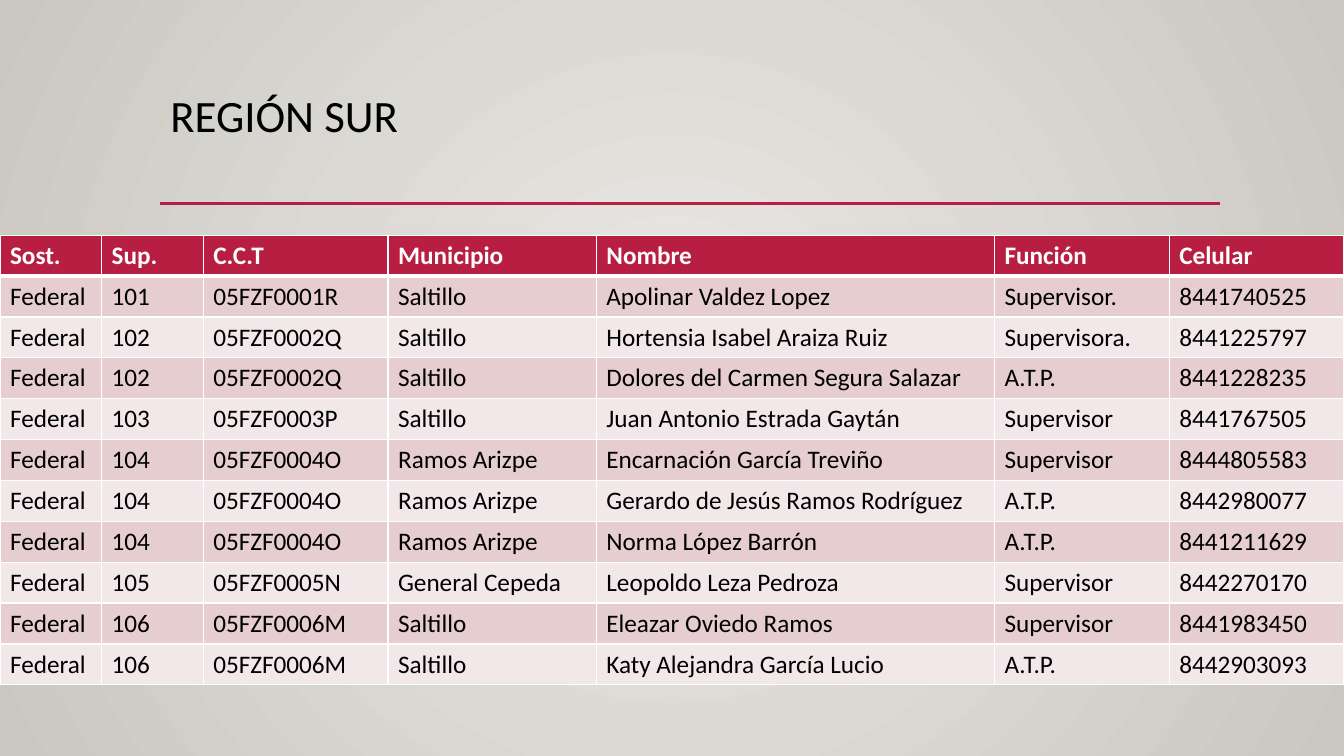
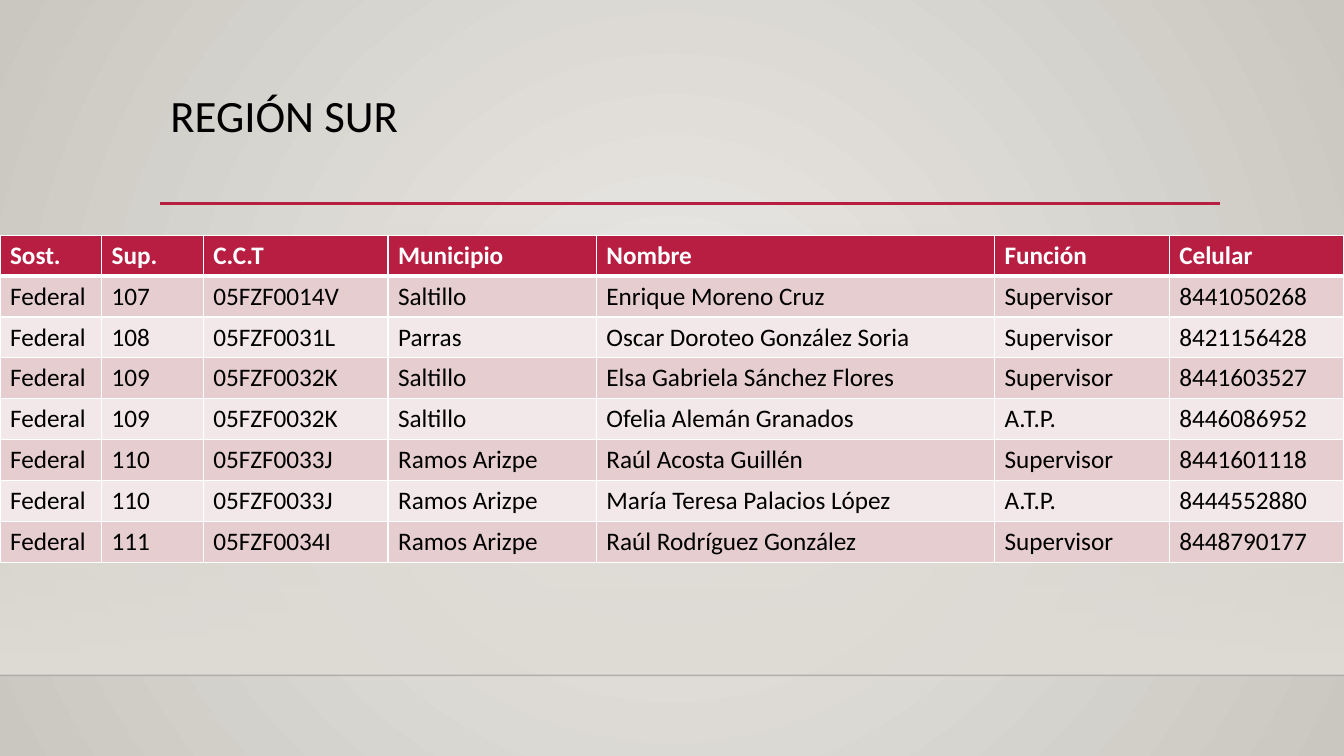
from lxml.etree import SubElement
from pptx import Presentation
from pptx.dml.color import RGBColor
from pptx.enum.shapes import MSO_CONNECTOR, MSO_SHAPE
from pptx.enum.text import MSO_ANCHOR
from pptx.oxml.ns import qn
from pptx.util import Inches, Pt

GRID_COLUMNS, GRID_ROWS = 160, 90
SLIDE_WIDTH, SLIDE_HEIGHT = Inches(13.33), Inches(7.5)
COLORS = {
    "accent": "B71E42",
    "glow": "ECEAE7",
    "edge": "CAC7C1",
    "floor": "DFDBD5",
    "floor_line": "000001",
    "text": "000000",
    "white": "FFFFFF",
    "odd_row": "E6CDCF",
    "even_row": "F3E8E9",
}
TITLE_FONT = {"name": "Calibri", "size": Pt(32)}
HEADER_FONT = {"name": "Calibri", "size": Pt(18), "bold": True}
BODY_FONT = {"name": "Calibri", "size": Pt(18), "bold": False}

HEADINGS = ("Sost.", "Sup.", "C.C.T", "Municipio", "Nombre", "Función", "Celular")
COLUMN_WIDTHS = (12.1, 12.1, 22, 24.8, 47.4, 20.8, 20.8)
ROW_HEIGHT = 4.87
SUPPORT = "Federal"
STAFF_PAGES = (
    (
        ("101", "05FZF0001R", "Saltillo", "Apolinar Valdez Lopez", "Supervisor.", "8441740525"),
        ("102", "05FZF0002Q", "Saltillo", "Hortensia Isabel Araiza Ruiz", "Supervisora.", "8441225797"),
        ("102", "05FZF0002Q", "Saltillo", "Dolores del Carmen Segura Salazar", "A.T.P.", "8441228235"),
        ("103", "05FZF0003P", "Saltillo", "Juan Antonio Estrada Gaytán", "Supervisor", "8441767505"),
        ("104", "05FZF0004O", "Ramos Arizpe", "Encarnación García Treviño", "Supervisor", "8444805583"),
        ("104", "05FZF0004O", "Ramos Arizpe", "Gerardo de Jesús Ramos Rodríguez", "A.T.P.", "8442980077"),
        ("104", "05FZF0004O", "Ramos Arizpe", "Norma López Barrón", "A.T.P.", "8441211629"),
        ("105", "05FZF0005N", "General Cepeda", "Leopoldo Leza Pedroza", "Supervisor", "8442270170"),
        ("106", "05FZF0006M", "Saltillo", "Eleazar Oviedo Ramos", "Supervisor", "8441983450"),
        ("106", "05FZF0006M", "Saltillo", "Katy Alejandra García Lucio", "A.T.P.", "8442903093"),
    ),
    (
        ("107", "05FZF0014V", "Saltillo", "Enrique Moreno Cruz", "Supervisor", "8441050268"),
        ("108", "05FZF0031L", "Parras", "Oscar Doroteo González Soria", "Supervisor", "8421156428"),
        ("109", "05FZF0032K", "Saltillo", "Elsa Gabriela Sánchez Flores", "Supervisor", "8441603527"),
        ("109", "05FZF0032K", "Saltillo", "Ofelia Alemán Granados", "A.T.P.", "8446086952"),
        ("110", "05FZF0033J", "Ramos Arizpe", "Raúl Acosta Guillén", "Supervisor", "8441601118"),
        ("110", "05FZF0033J", "Ramos Arizpe", "María Teresa Palacios López", "A.T.P.", "8444552880"),
        ("111", "05FZF0034I", "Ramos Arizpe", "Raúl Rodríguez González", "Supervisor", "8448790177"),
    ),
)


def color(name):
    return RGBColor.from_string(COLORS[name])


def across(columns):
    return round(SLIDE_WIDTH * columns / GRID_COLUMNS)


def down(rows):
    return round(SLIDE_HEIGHT * rows / GRID_ROWS)


def set_opacity(color_element, percent):
    SubElement(color_element, qn("a:alpha"), val=str(percent * 1000))


def set_borders(cell, widths):
    """Draw white borders; widths maps the sides L, R, T and B to points."""
    properties = cell._tc.get_or_add_tcPr()
    for position, side in enumerate("LRTB"):
        border = SubElement(properties, qn(f"a:ln{side}"), w=str(Pt(widths[side])))
        fill = SubElement(border, qn("a:solidFill"))
        SubElement(fill, qn("a:srgbClr"), val=COLORS["white"])
        properties.insert(position, border)


class Deck:
    def __init__(self):
        self.presentation = Presentation()
        self.presentation.slide_width = SLIDE_WIDTH
        self.presentation.slide_height = SLIDE_HEIGHT
        self.page = None

    def add_page(self, title):
        """Start a slide with the shared background, band, rule and title."""
        self.page = self.presentation.slides.add_slide(self.presentation.slide_layouts[6])
        self.background()
        self.band(26.5, 80.4)
        self.line(0, GRID_COLUMNS, 80.4, "floor_line", 1, opacity=20)
        self.line(19.1, 145.2, 24.25, "accent", 2.5)
        self.title(title)

    def gradient(self, fill, owner, start, end):
        """Set a two-colour gradient and return its XML element."""
        fill.gradient()
        for stop, name in zip(fill.gradient_stops, (start, end)):
            stop.color.rgb = color(name)
        return next(owner.iter(qn("a:gradFill")))

    def background(self):
        gradient = self.gradient(self.page.background.fill, self.page.element, "glow", "edge")
        gradient.remove(gradient.find(qn("a:lin")))
        circle = SubElement(gradient, qn("a:path"), {"path": "circle"})
        center = dict.fromkeys("ltrb", "50000")
        SubElement(circle, qn("a:fillToRect"), center)

    def band(self, top, bottom):
        """Add a full-width band that fades in from top to bottom."""
        box = self.page.shapes.add_shape(
            MSO_SHAPE.RECTANGLE, 0, down(top), SLIDE_WIDTH, down(bottom - top))
        box.shadow.inherit = False
        box.line.fill.background()
        gradient = self.gradient(box.fill, box.element, "floor", "floor")
        box.fill.gradient_angle = 270
        set_opacity(next(gradient.iter(qn("a:srgbClr"))), 0)

    def line(self, left, right, top, color_name, width, opacity=100):
        line = self.page.shapes.add_connector(
            MSO_CONNECTOR.STRAIGHT, across(left), down(top), across(right), down(top))
        line.line.color.rgb = color(color_name)
        line.line.width = Pt(width)
        if opacity < 100:
            set_opacity(next(line.element.iter(qn("a:srgbClr"))), opacity)
        SubElement(line.element.spPr, qn("a:effectLst"))

    def add_span(self, paragraph, text, font, color_name):
        span = paragraph.add_run()
        span.text = text
        for name, value in font.items():
            setattr(span.font, name, value)
        span.font.color.rgb = color(color_name)

    def title(self, text):
        box = self.page.shapes.add_textbox(across(19.1), down(10.6), across(126), down(13.8))
        frame = box.text_frame
        frame.word_wrap = True
        frame.vertical_anchor = MSO_ANCHOR.TOP
        frame.paragraphs[0].line_spacing = 0.9
        self.add_span(frame.paragraphs[0], text, TITLE_FONT, "text")

    def table(self, top, records):
        rows = [HEADINGS, *((SUPPORT, *record) for record in records)]
        table = self.page.shapes.add_table(
            len(rows), len(HEADINGS), 0, down(top), SLIDE_WIDTH,
            down(ROW_HEIGHT * len(rows))).table
        for column, width in zip(table.columns, COLUMN_WIDTHS):
            column.width = across(width)
        for row_number, texts in enumerate(rows):
            table.rows[row_number].height = down(ROW_HEIGHT)
            if row_number == 0:
                fill, font, text_color = "accent", HEADER_FONT, "white"
            else:
                fill = "odd_row" if row_number % 2 else "even_row"
                font, text_color = BODY_FONT, "text"
            borders = {
                "L": 1, "R": 1,
                "T": 3 if row_number == 1 else 1,
                "B": 3 if row_number == 0 else 1,
            }
            for column_number, text in enumerate(texts):
                cell = table.cell(row_number, column_number)
                cell.fill.solid()
                cell.fill.fore_color.rgb = color(fill)
                set_borders(cell, borders)
                self.add_span(cell.text_frame.paragraphs[0], text, font, text_color)


def main():
    deck = Deck()
    for records in STAFF_PAGES:
        deck.add_page("REGIÓN SUR")
        deck.table(28, records)
    deck.presentation.save("out.pptx")


if __name__ == "__main__":
    main()
